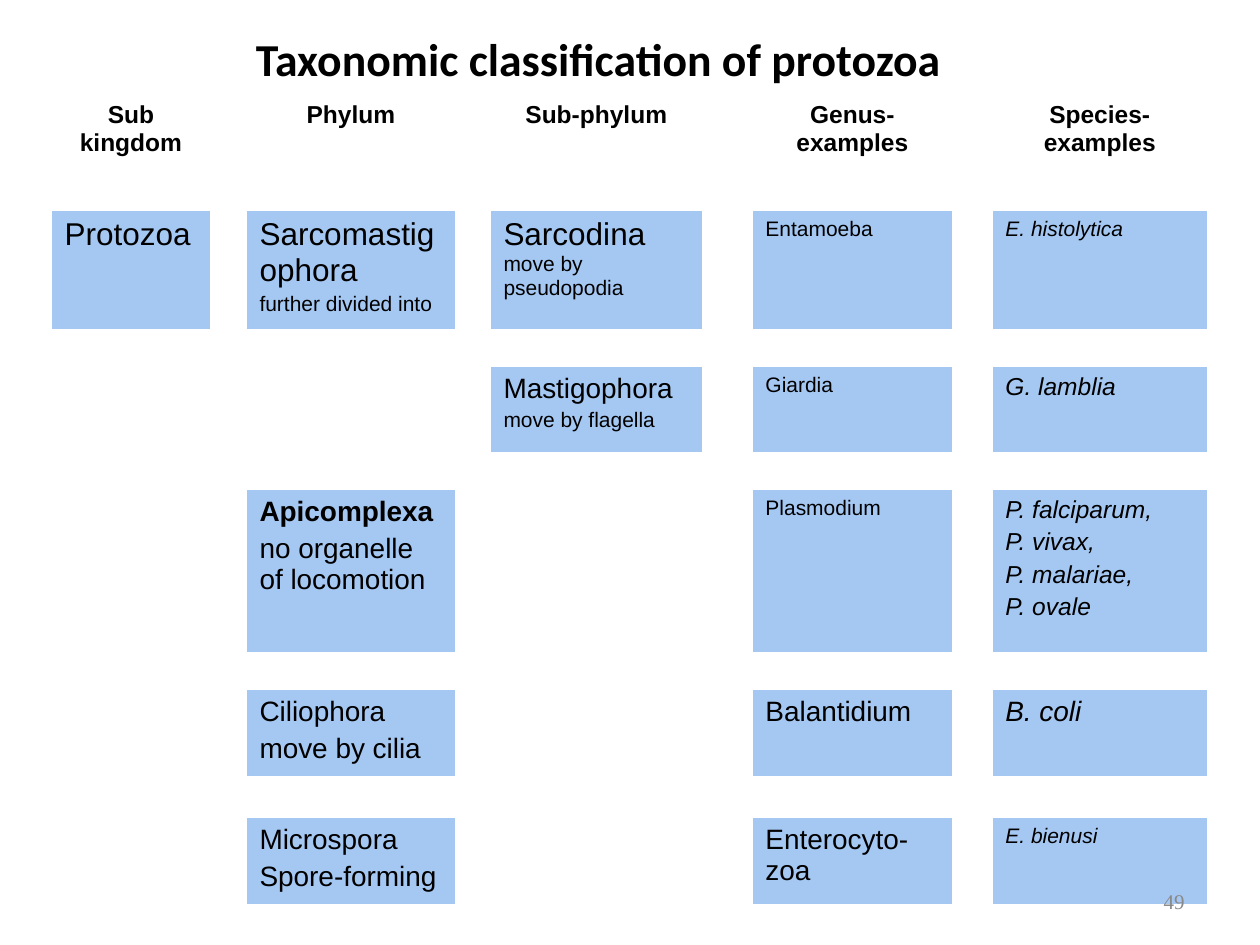
from pptx import Presentation
from pptx.dml.color import RGBColor
from pptx.enum.text import MSO_ANCHOR, MSO_AUTO_SIZE, PP_ALIGN
from pptx.util import Pt

EMU_PER_PX = 914400 / 126
CENTER, LEFT, RIGHT = PP_ALIGN.CENTER, PP_ALIGN.LEFT, PP_ALIGN.RIGHT
MIDDLE = MSO_ANCHOR.MIDDLE
NO_AUTOFIT = MSO_AUTO_SIZE.NONE
TITLE_ONLY_LAYOUT = 5
PLAIN_TABLE_STYLE = "{2D5ABB26-0587-4C30-8999-92F81FD0307C}"
COLORS = {"text": "000000", "box": "A5C8F3", "background": "FFFFFF", "number": "898989"}

COLUMN_WIDTHS = [158, 37, 208, 36, 211, 51, 199, 41, 214]
ROW_HEIGHTS = [78, 38, 118, 38, 85, 38, 162, 38, 86, 42, 86, 33]
HEADERS = ["Sub kingdom", "Phylum", "Sub-phylum", "Genus- examples", "Species- examples"]

# Each box is a list of paragraphs, each paragraph a list of (text, size, style) runs.
# Boxes are keyed by position among the filled rows and columns.
BOXES = {
    (1, 0): [[("Protozoa", 18, "")]],
    (1, 1): [[("Sarcomastigophora", 18, "")], [("further divided into", 12, "")]],
    (1, 2): [[("Sarcodina ", 18, ""), ("move by pseudopodia", 12, "")]],
    (1, 3): [[("Entamoeba", 12, "")]],
    (1, 4): [[("E. histolytica", 12, "i")]],
    (2, 2): [[("Mastigophora", 16, "")], [("move by flagella", 12, "")]],
    (2, 3): [[("Giardia", 12, "")]],
    (2, 4): [[("G. lamblia", 14, "i")]],
    (3, 1): [[("Apicomplexa", 16, "b")], [("no organelle of locomotion", 16, "")]],
    (3, 3): [[("Plasmodium", 12, "")]],
    (3, 4): [[(name, 14, "i")]
             for name in ("P. falciparum,", "P. vivax,", "P. malariae,", "P. ovale")],
    (4, 1): [[("Ciliophora", 16, "")], [("move by cilia", 16, "")]],
    (4, 3): [[("Balantidium", 16, "")]],
    (4, 4): [[("B. coli", 16, "i")]],
    (5, 1): [[("Microspora", 16, "")], [("Spore-forming", 16, "")]],
    (5, 3): [[("Enterocyto-zoa", 16, "")]],
    (5, 4): [[("E. bienusi", 12, "i")]],
}


def px(length):
    return round(length * EMU_PER_PX)


def color(name):
    return RGBColor.from_string(COLORS[name])


def add_run(paragraph, text, size, style="", font="Arial", color_name="text"):
    run = paragraph.add_run()
    run.text = text
    run.font.name = font
    run.font.size = Pt(size)
    run.font.bold = "b" in style
    run.font.italic = "i" in style
    run.font.color.rgb = color(color_name)


def fill_cell(cell, paragraphs, alignment=LEFT):
    """Write the paragraphs, set apart by a fifth of their text size."""
    frame = cell.text_frame
    for index, runs in enumerate(paragraphs):
        paragraph = frame.add_paragraph() if index else frame.paragraphs[0]
        paragraph.alignment = alignment
        if index:
            paragraph.space_before = Pt(0.2 * runs[0][1])
        for run in runs:
            add_run(paragraph, *run)


def add_title(slide, text):
    title = slide.shapes.title
    title.left, title.top, title.width, title.height = px(63), px(32), px(1071), px(53)
    title.fill.solid()
    title.fill.fore_color.rgb = color("background")
    frame = title.text_frame
    frame.auto_size = NO_AUTOFIT
    frame.vertical_anchor = MIDDLE
    frame.paragraphs[0].alignment = CENTER
    add_run(frame.paragraphs[0], text, 26.1, "b", "Calibri")


def add_classification_table(slide):
    frame = slide.shapes.add_table(
        len(ROW_HEIGHTS), len(COLUMN_WIDTHS), px(52), px(95),
        px(sum(COLUMN_WIDTHS)), px(sum(ROW_HEIGHTS)))
    table = frame.table
    table.first_row = table.horz_banding = False
    table._tbl.tblPr.find("{*}tableStyleId").text = PLAIN_TABLE_STYLE
    for column, width in zip(table.columns, COLUMN_WIDTHS):
        column.width = px(width)
    for row, height in zip(table.rows, ROW_HEIGHTS):
        row.height = px(height)

    for cell in table.iter_cells():
        cell.fill.background()
        # Small empty paragraphs let the spacer rows keep their height
        cell.text_frame.paragraphs[0]._p.get_or_add_endParaRPr().set("sz", "800")
    for index, header in enumerate(HEADERS):
        fill_cell(table.cell(0, 2 * index), [[(header, 14, "b")]], CENTER)
    for (row, column), paragraphs in BOXES.items():
        cell = table.cell(2 * row, 2 * column)
        cell.fill.solid()
        cell.fill.fore_color.rgb = color("box")
        fill_cell(cell, paragraphs)


def add_slide_number(slide, number):
    box = slide.shapes.add_textbox(px(903), px(876), px(294), px(50))
    frame = box.text_frame
    frame.word_wrap = True
    frame.vertical_anchor = MIDDLE
    frame.paragraphs[0].alignment = RIGHT
    add_run(frame.paragraphs[0], number, 12, "", "Times New Roman", "number")


def main():
    presentation = Presentation()
    presentation.slide_width, presentation.slide_height = px(1260), px(945)
    slide = presentation.slides.add_slide(presentation.slide_layouts[TITLE_ONLY_LAYOUT])
    add_title(slide, "Taxonomic classification of protozoa")
    add_classification_table(slide)
    add_slide_number(slide, "49")
    presentation.save("out.pptx")


if __name__ == "__main__":
    main()
